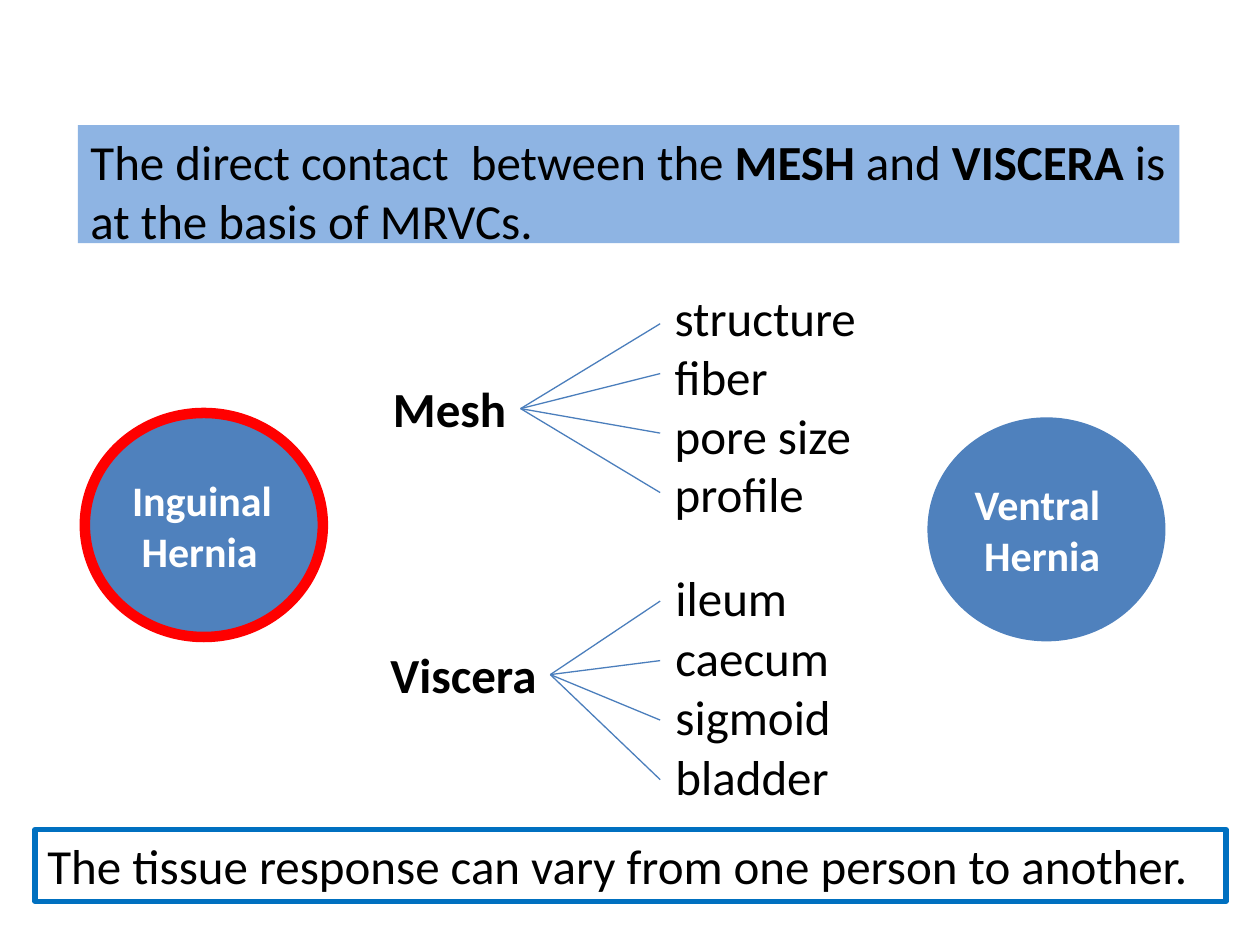
from dataclasses import dataclass

from lxml import etree
from pptx import Presentation
from pptx.dml.color import RGBColor
from pptx.enum import shapes, text
from pptx.util import Pt


@dataclass(frozen=True)
class Theme:
    font: str = "Calibri"
    body_size: float = 28
    circle_size: float = 24
    black: str = "000000"
    white: str = "FFFFFF"
    banner: str = "8EB4E3"
    circle: str = "4F81BD"
    highlight: str = "FF0000"
    frame: str = "0070C0"
    branch: str = "4B7EBC"


@dataclass(frozen=True)
class Box:
    left: float
    top: float
    width: float
    height: float

    def lengths(self) -> tuple:
        return Pt(self.left), Pt(self.top), Pt(self.width), Pt(self.height)


@dataclass(frozen=True)
class Circle:
    box: Box
    lines: tuple[str, ...]
    outline: str | None = None


@dataclass(frozen=True)
class Topic:
    name: str
    box: Box
    branch_ends: tuple[float, ...]


THEME = Theme()
LINE_HEIGHT = 41
ITEM_STEP = 34
BRANCH_RIGHT = 377.25

MESH_PROPERTIES = ("structure", "fiber", "pore size", "profile")
ORGANS = (("ileum", 98), ("caecum", 122.5), ("sigmoid", 123), ("bladder", 153.5))
TOPICS = (
    Topic("Mesh", Box(217.5, 213, 80, LINE_HEIGHT), (185, 213.5, 247.5, 281.5)),
    Topic("Viscera", Box(216, 365, 98.5, LINE_HEIGHT),
          tuple(343.5 + ITEM_STEP * row for row in range(4))),
)
CIRCLES = (
    Circle(Box(530, 238.5, 136, 128), ("Ventral", " Hernia")),
    Circle(Box(48.5, 236, 136, 128), ("Inguinal", " Hernia"), THEME.highlight),
)


def rgb(value: str) -> RGBColor:
    return RGBColor.from_string(value)


def write(shape, *lines, size: float = THEME.body_size, color: str = THEME.black,
          bold: bool = False, anchor=text.MSO_ANCHOR.TOP, margin_left: float = 7.2) -> None:
    """Fill a shape with left-aligned paragraphs; a line is a string or (string, bold) runs."""
    frame = shape.text_frame
    frame.word_wrap = True
    frame.auto_size = text.MSO_AUTO_SIZE.NONE
    frame.vertical_anchor = anchor
    frame.margin_left = Pt(margin_left)
    for index, line in enumerate(lines):
        paragraph = frame.add_paragraph() if index else frame.paragraphs[0]
        paragraph.alignment = text.PP_ALIGN.LEFT
        runs = ((line, bold),) if isinstance(line, str) else line
        for words, is_bold in runs:
            run = paragraph.add_run()
            run.text = words
            run.font.name = THEME.font
            run.font.size = Pt(size)
            run.font.bold = is_bold
            run.font.color.rgb = rgb(color)


def place(shape, box: Box) -> None:
    shape.left, shape.top, shape.width, shape.height = box.lengths()


def add_label(slide, box: Box, words: str, **style):
    label = slide.shapes.add_textbox(*box.lengths())
    write(label, words, **style)
    return label


def add_circle(slide, circle: Circle) -> None:
    shape = slide.shapes.add_shape(shapes.MSO_SHAPE.OVAL, *circle.box.lengths())
    shape.shadow.inherit = False
    shape.fill.solid()
    shape.fill.fore_color.rgb = rgb(THEME.circle)
    if circle.outline:
        shape.line.color.rgb = rgb(circle.outline)
        shape.line.width = Pt(6)
    else:
        shape.line.fill.background()
    write(shape, *circle.lines, size=THEME.circle_size, color=THEME.white,
          bold=True, anchor=text.MSO_ANCHOR.MIDDLE)


def add_topic(slide, topic: Topic) -> None:
    """Draw a bold label with branches fanning out from its right side."""
    label = add_label(slide, topic.box, topic.name, bold=True)
    start = topic.box.left + topic.box.width, topic.box.top + topic.box.height / 2
    for end in topic.branch_ends:
        branch = slide.shapes.add_connector(
            shapes.MSO_CONNECTOR.STRAIGHT, Pt(start[0]), Pt(start[1]),
            Pt(BRANCH_RIGHT), Pt(end))
        branch.begin_connect(label, 3)
        branch.line.color.rgb = rgb(THEME.branch)
        branch.line.width = Pt(0.75)
        properties = branch._element.spPr
        namespace = properties.nsmap["a"]
        etree.SubElement(properties, f"{{{namespace}}}effectLst")


def main() -> None:
    presentation = Presentation()
    presentation.slide_width, presentation.slide_height = Pt(720), Pt(540)
    slide = presentation.slides.add_slide(presentation.slide_layouts[0])

    properties = slide.shapes.title
    place(properties, Box(296.5, 173.5, 423.5, 116))
    write(properties, *MESH_PROPERTIES, anchor=text.MSO_ANCHOR.MIDDLE, margin_left=89)

    banner = slide.placeholders[1]
    place(banner, Box(44.5, 71.5, 629.5, 67.5))
    banner.fill.solid()
    banner.fill.fore_color.rgb = rgb(THEME.banner)
    write(banner, (("The direct contact  between the ", False), ("MESH", True),
                   (" and ", False), ("VISCERA", True),
                   (" is at the basis of MRVCs.", False)))

    for row, (organ, width) in enumerate(ORGANS):
        add_label(slide, Box(360, 321 + ITEM_STEP * row, width, LINE_HEIGHT),
                  organ, margin_left=26)

    conclusion = add_label(slide, Box(20, 474, 680.5, LINE_HEIGHT),
                           "The tissue response can vary from one person to another.")
    conclusion.line.color.rgb = rgb(THEME.frame)
    conclusion.line.width = Pt(3)

    for circle in CIRCLES:
        add_circle(slide, circle)
    for topic in TOPICS:
        add_topic(slide, topic)

    presentation.save("out.pptx")


if __name__ == "__main__":
    main()
